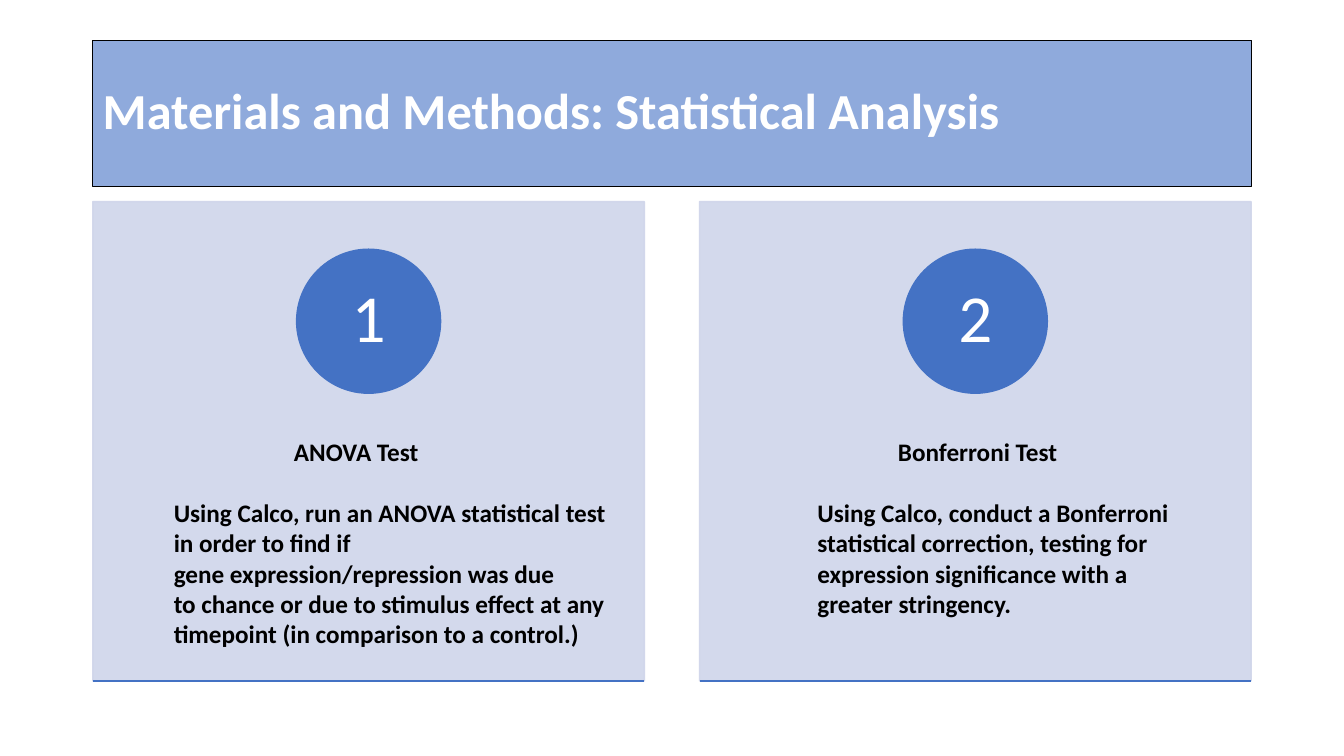
"""Builds the statistical analysis slide with two numbered test panels."""
from lxml.etree import SubElement
from pptx import Presentation
from pptx.dml.color import RGBColor
from pptx.enum.shapes import MSO_CONNECTOR as Connector, MSO_SHAPE as Shape
from pptx.enum.text import MSO_ANCHOR as Anchor, PP_ALIGN as Align
from pptx.oxml.ns import qn
from pptx.util import Cm, Pt

WHITE = RGBColor(0xFF, 0xFF, 0xFF)
BLACK = RGBColor(0x00, 0x00, 0x00)
TITLE_BLUE = RGBColor(0x8F, 0xAA, 0xDC)
PANEL_BLUE = RGBColor(0xCF, 0xD5, 0xEA)
ACCENT_BLUE = RGBColor(0x44, 0x72, 0xC4)

TITLE_FONT = {"name": "Calibri", "size": Pt(36), "bold": True}
NUMBER_FONT = {"name": "Calibri", "size": Pt(48), "bold": False}
BODY_FONT = {"name": "Calibri", "size": Pt(18), "bold": True}

LEFT, PANEL_TOP, PANEL_WIDTH, PANEL_HEIGHT = 2.34, 5.08, 13.9, 12.08
PANEL_STEP, CIRCLE_SIZE = 15.29, 3.63
HARD_SPACE = chr(160)
TESTS = [
    {"heading": "ANOVA Test", "indent": 4.3, "left": 2.86, "width": 12.83, "height": 5.64,
     "body": "Using Calco, run an ANOVA statistical test in order to find if "
             f"gene{HARD_SPACE}expression/repression was due to{HARD_SPACE}chance or due to "
             f"stimulus effect at{HARD_SPACE}any timepoint (in{HARD_SPACE}comparison "
             f"to a{HARD_SPACE}control.)"},
    {"heading": "Bonferroni Test", "indent": 3.3, "left": 19.08, "width": 11.33, "height": 4.88,
     "body": "Using Calco, conduct a Bonferroni statistical correction, testing for "
             "expression significance with a greater stringency."},
]


def add_block(kind, left, top, width, height, fill, line, weight):
    block = slide.shapes.add_shape(kind, Cm(left), Cm(top), Cm(width), Cm(height))
    block.shadow.inherit = False
    block.fill.solid()
    block.fill.fore_color.rgb = fill
    block.line.color.rgb = line
    block.line.width = Pt(weight)
    return block


def write_text(para, text, font, color, align):
    para.alignment = align
    span = para.add_run()
    span.text = text
    span.font.color.rgb = color
    for name, value in font.items():
        setattr(span.font, name, value)


deck = Presentation()
deck.slide_width, deck.slide_height = Cm(33.87), Cm(19.05)
slide = deck.slides.add_slide(deck.slide_layouts[6])

title = add_block(Shape.RECTANGLE, LEFT, 1.01, 29.21, 3.68, TITLE_BLUE, BLACK, 0.75)
title.text_frame.word_wrap = True
title.text_frame.vertical_anchor = Anchor.MIDDLE
title_para = title.text_frame.paragraphs[0]
title_para.line_spacing = 0.9
write_text(title_para, "Materials and Methods: Statistical Analysis", TITLE_FONT, WHITE, Align.LEFT)

for index, test in enumerate(TESTS):
    left = LEFT + index * PANEL_STEP
    panel = add_block(Shape.RECTANGLE, left, PANEL_TOP, PANEL_WIDTH, PANEL_HEIGHT,
                      PANEL_BLUE, PANEL_BLUE, 1)
    for color in panel.element.spPr.iter(qn("a:srgbClr")):
        SubElement(color, qn("a:alpha"), val="90000")

    circle = add_block(Shape.OVAL, left + (PANEL_WIDTH - CIRCLE_SIZE) / 2, 6.28,
                       CIRCLE_SIZE, CIRCLE_SIZE, ACCENT_BLUE, ACCENT_BLUE, 1)
    frame = circle.text_frame
    frame.vertical_anchor = Anchor.MIDDLE
    frame.margin_top = frame.margin_bottom = Cm(0.03)
    number_para = frame.paragraphs[0]
    number_para.line_spacing = 0.9
    write_text(number_para, str(index + 1), NUMBER_FONT, WHITE, Align.CENTER)

    bottom = Cm(PANEL_TOP + PANEL_HEIGHT)
    baseline = slide.shapes.add_connector(Connector.STRAIGHT, Cm(left), bottom,
                                          Cm(left + PANEL_WIDTH), bottom)
    baseline.line.color.rgb = ACCENT_BLUE
    baseline.line.width = Pt(1.5)
    SubElement(baseline.element.spPr, qn("a:effectLst"))

    box = slide.shapes.add_textbox(Cm(test["left"]), Cm(10.87), Cm(test["width"]), Cm(test["height"]))
    box.text_frame.word_wrap = True
    heading = box.text_frame.paragraphs[0]
    body = box.text_frame.add_paragraph()
    body.space_before = Pt(22)
    for para, text, indent in ((heading, test["heading"], test["indent"]),
                               (body, test["body"], 1.27)):
        write_text(para, text, BODY_FONT, BLACK, Align.LEFT)
        para._p.get_or_add_pPr().set("marL", str(Cm(indent)))

deck.save("out.pptx")
